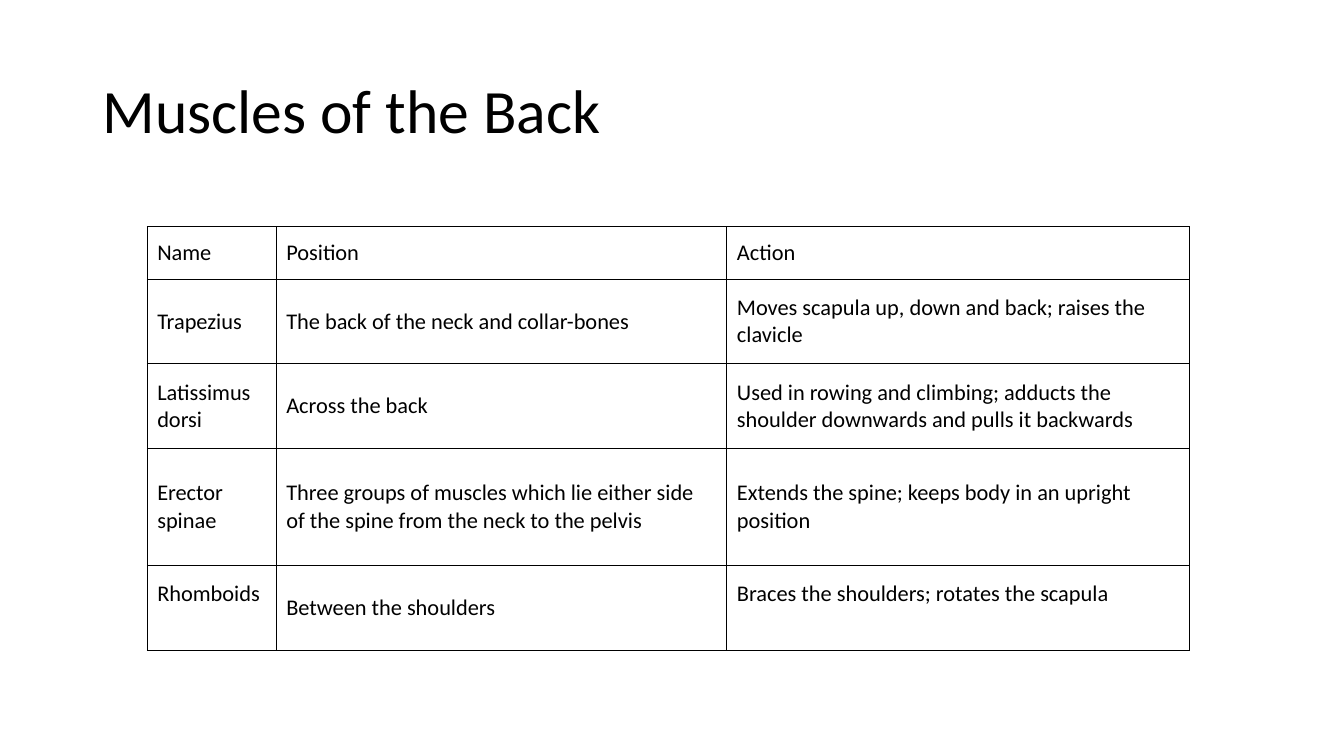
from dataclasses import dataclass

from lxml import etree
from pptx import Presentation
from pptx import util as u
from pptx.dml import color
from pptx.enum import text
from pptx.oxml import ns


@dataclass(frozen=True)
class Theme:
    font: str = "Calibri"
    ink: str = "000000"
    title: int = 44
    body: int = 16
    rule: float = 0.75


THEME = Theme()
COLS = [1.28, 4.47, 4.59]
ROWS = [0.52, 0.84, 0.84, 1.16, 0.84]
CELLS = [
    ["Name", "Position", "Action"],
    ["Trapezius", "The back of the neck and collar-bones",
     "Moves scapula up, down and back; raises the clavicle"],
    ["Latissimus dorsi", "Across the back",
     "Used in rowing and climbing; adducts the shoulder downwards and pulls it backwards"],
    ["Erector spinae",
     "Three groups of muscles which lie either side of the spine from the neck to the pelvis",
     "Extends the spine; keeps body in an upright position"],
    ["Rhomboids", "Between the shoulders", "Braces the shoulders; rotates the scapula"],
]
RAISED = {"Rhomboids", "Braces the shoulders; rotates the scapula"}
LIFT = 0.32


def write(frame, words, size=THEME.body, space=1.0):
    frame.word_wrap = True
    para = frame.paragraphs[0]
    para.alignment = text.PP_ALIGN.LEFT
    para.line_spacing = space
    run = para.add_run()
    run.text = words
    run.font.name = THEME.font
    run.font.size = u.Pt(size)
    run.font.color.rgb = color.RGBColor.from_string(THEME.ink)


def border(cell):
    props = cell._tc.get_or_add_tcPr()
    for side in ("lnL", "lnR", "lnT", "lnB"):
        line = etree.SubElement(props, ns.qn(f"a:{side}"), w=str(u.Pt(THEME.rule)))
        fill = etree.SubElement(line, ns.qn("a:solidFill"))
        etree.SubElement(fill, ns.qn("a:srgbClr"), val=THEME.ink)


def add_title(slide, words):
    box = slide.shapes.add_textbox(
        u.Inches(0.92), u.Inches(0.4), u.Inches(11.5), u.Inches(1.45))
    box.text_frame.vertical_anchor = text.MSO_ANCHOR.MIDDLE
    write(box.text_frame, words, size=THEME.title, space=0.9)


def add_grid(slide):
    grid = slide.shapes.add_table(
        len(ROWS), len(COLS), u.Inches(1.46), u.Inches(2.25),
        u.Inches(sum(COLS)), u.Inches(sum(ROWS))).table
    grid.first_row = grid.horz_banding = False
    for col, width in zip(grid.columns, COLS):
        col.width = u.Inches(width)
    for row, height, line in zip(grid.rows, ROWS, CELLS):
        row.height = u.Inches(height)
        for cell, words in zip(row.cells, line):
            border(cell)
            cell.fill.background()
            cell.vertical_anchor = text.MSO_ANCHOR.MIDDLE
            if words in RAISED:
                cell.margin_bottom = u.Inches(LIFT)
            write(cell.text_frame, words)


def main():
    deck = Presentation()
    deck.slide_width = u.Inches(13.33)
    deck.slide_height = u.Inches(7.5)
    slide = deck.slides.add_slide(deck.slide_layouts[6])
    add_title(slide, "Muscles of the Back")
    add_grid(slide)
    deck.save("out.pptx")


if __name__ == "__main__":
    main()
